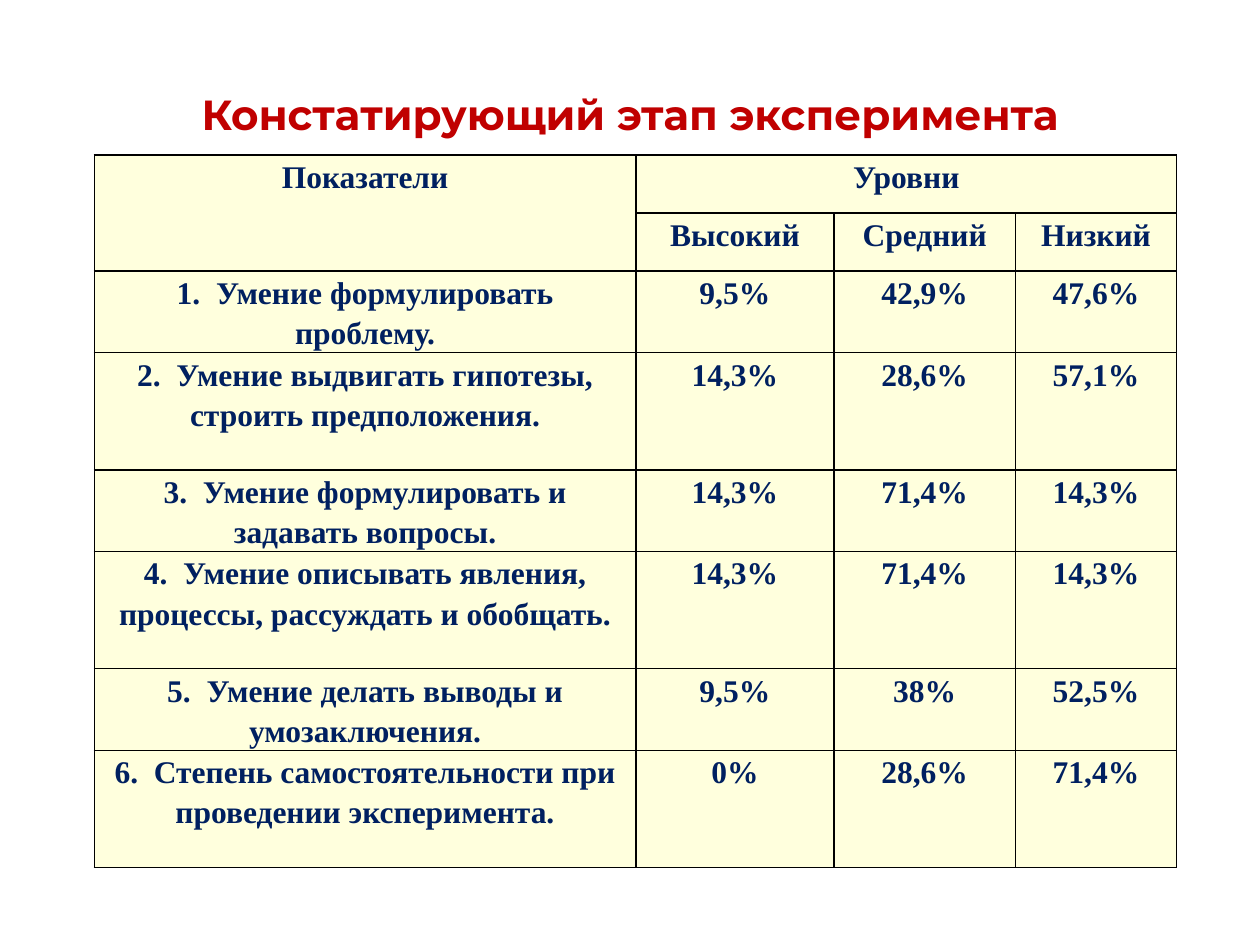
"""Build the slide with the table of results of the ascertaining stage."""
from lxml import etree
from pptx import Presentation
from pptx.dml.color import RGBColor
from pptx.enum.text import MSO_ANCHOR, PP_ALIGN
from pptx.oxml.ns import qn
from pptx.util import Cm, Pt

RED = RGBColor(0xC0, 0x00, 0x00)
NAVY = RGBColor(0x00, 0x20, 0x60)
CREAM = RGBColor(0xFF, 0xFF, 0xDD)
BLACK = RGBColor(0x00, 0x00, 0x00)

COLUMN_WIDTHS = [10.92, 3.99, 3.66, 3.25]
ROW_HEIGHTS = [1.17, 1.17] + [1.65, 2.36] * 3
HEADINGS = [
    ("Показатели", "Уровни", "", ""),
    ("", "Высокий", "Средний", "Низкий"),
]
SKILLS = [
    ("Умение формулировать проблему.", "9,5%", "42,9%", "47,6%"),
    ("Умение выдвигать гипотезы, строить предположения.", "14,3%", "28,6%", "57,1%"),
    ("Умение формулировать и задавать вопросы.", "14,3%", "71,4%", "14,3%"),
    ("Умение описывать явления, процессы, рассуждать и обобщать.", "14,3%", "71,4%", "14,3%"),
    ("Умение делать выводы и умозаключения.", "9,5%", "38%", "52,5%"),
    ("Степень самостоятельности при проведении эксперимента.", "0%", "28,6%", "71,4%"),
]


def write(frame, text, *, font, size, color, spacing=1.0):
    frame.word_wrap = True
    paragraph = frame.paragraphs[0]
    paragraph.alignment = PP_ALIGN.CENTER
    paragraph.line_spacing = spacing
    run = paragraph.add_run()
    run.text = text
    run.font.name = font
    run.font.size = Pt(size)
    run.font.bold = True
    run.font.color.rgb = color


def outline(cell, color, width):
    properties = cell._tc.get_or_add_tcPr()
    for side in ("a:lnL", "a:lnR", "a:lnT", "a:lnB"):
        line = etree.SubElement(properties, qn(side), w=str(Pt(width)))
        fill = etree.SubElement(line, qn("a:solidFill"))
        etree.SubElement(fill, qn("a:srgbClr"), val=str(color))


presentation = Presentation()
presentation.slide_width = Cm(25.4)
presentation.slide_height = Cm(19.05)
slide = presentation.slides.add_slide(presentation.slide_layouts[5])

stage = slide.shapes.title
stage.left, stage.top, stage.width, stage.height = Cm(0), Cm(1.65), Cm(25.4), Cm(1.27)
stage.text_frame.vertical_anchor = MSO_ANCHOR.MIDDLE
write(stage.text_frame, "Констатирующий этап эксперимента",
      font="Montserrat", size=24, color=RED)

rows = HEADINGS + [
    (f"{number}.  {skill}", *shares)
    for number, (skill, *shares) in enumerate(SKILLS, 1)
]
results = slide.shapes.add_table(
    len(rows), len(COLUMN_WIDTHS), Cm(1.9), Cm(3.12),
    Cm(sum(COLUMN_WIDTHS)), Cm(sum(ROW_HEIGHTS)),
).table
for column, width in zip(results.columns, COLUMN_WIDTHS):
    column.width = Cm(width)
for row, height in zip(results.rows, ROW_HEIGHTS):
    row.height = Cm(height)
results.cell(0, 0).merge(results.cell(1, 0))
results.cell(0, 1).merge(results.cell(0, 3))

for row, texts in zip(results.rows, rows):
    for cell, text in zip(row.cells, texts):
        outline(cell, BLACK, 1)
        cell.fill.solid()
        cell.fill.fore_color.rgb = CREAM
        cell.margin_left = cell.margin_right = Cm(0.18)
        cell.margin_top = cell.margin_bottom = Cm(0)
        if text:
            write(cell.text_frame, text, font="Times New Roman",
                  size=18, color=NAVY, spacing=1.15)

presentation.save("out.pptx")
